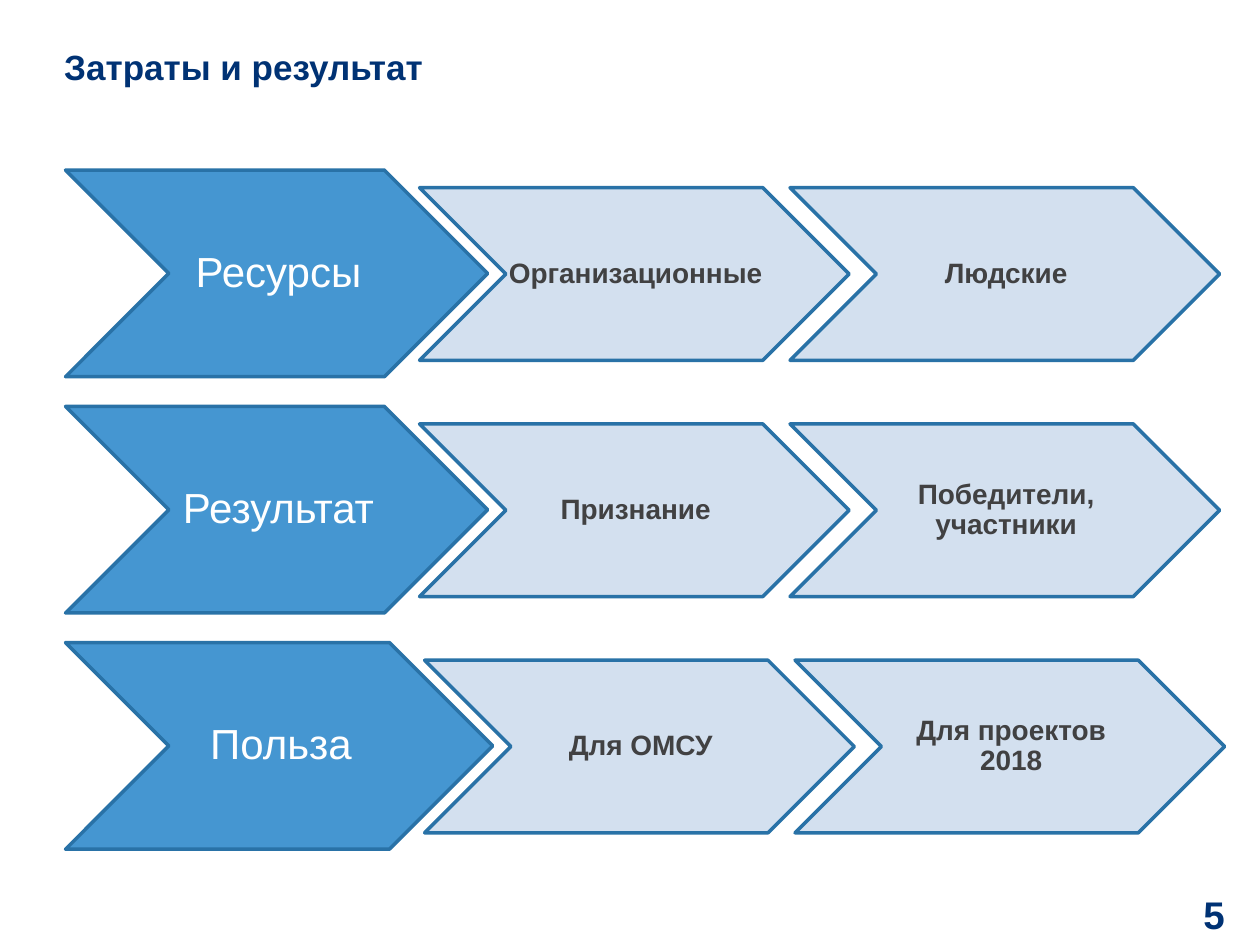
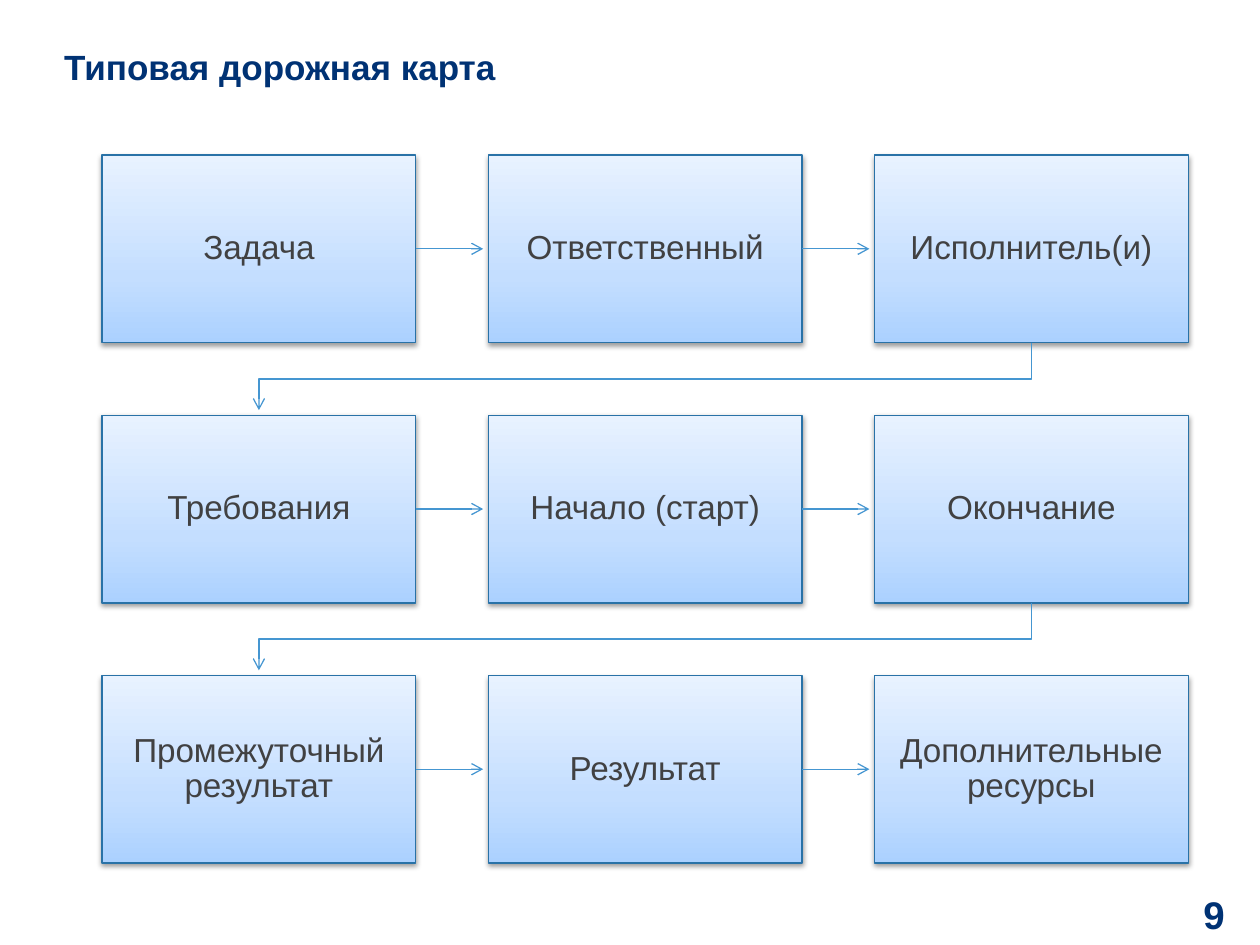
from collections import namedtuple
from copy import deepcopy

from lxml import etree
from pptx import Presentation
from pptx import util as u
from pptx.dml.color import RGBColor
from pptx.enum import shapes, text
from pptx.oxml.ns import qn

COLORS = {
    "navy": "003274",
    "blue": "4596D1",
    "outline": "2972A7",
    "pale": "CFDDEE",
    "ink": "414142",
    "white": "FFFFFF",
    "shadow": "000000",
}
BOX_GRADIENT = [(0, "ABD1FF"), (0.35, "C4DEFF"), (1, "E8F2FF")]
FONT = "Arial"
TITLE_FRAME = (0.51, 0, 8.35, 1.05)
NUMBER_FRAME = (9.03, 7.05, 0.69, 0.41)
ARROW_GAP = 0.04

Grid = namedtuple("Grid", "left top column_step row_step width height")
STAGES = Grid(0.52, 1.35, 0, 3.75 / 2, 3.35, 1.64)
DETAILS = Grid(3.33, 1.49, 2.94, 3.75 / 2, 3.41, 1.37)
STEPS = Grid(0.81, 1.23, 6.13 / 2, 4.13 / 2, 2.49, 1.49)

COST_ROWS = [
    ("Ресурсы", ["Организационные", "Людские"], 0),
    ("Результат", ["Признание", "Победители, участники"], 0),
    ("Польза", ["Для ОМСУ", "Для проектов 2018"], 0.04),
]
ROADMAP_ROWS = [
    ["Задача", "Ответственный", "Исполнитель(и)"],
    ["Требования", "Начало (старт)", "Окончание"],
    ["Промежуточный результат", "Результат", "Дополнительные ресурсы"],
]


def rgb(name):
    return RGBColor.from_string(COLORS[name])


def inches(values):
    return [u.Inches(value) for value in values]


def cell(grid, column, row):
    return (grid.left + column * grid.column_step,
            grid.top + row * grid.row_step, grid.width, grid.height)


def write(shape, words, size, color, bold=False, align=text.PP_ALIGN.CENTER,
          margins=(0, 0, 0, 0), spacing=1.0):
    frame = shape.text_frame
    frame.auto_size = text.MSO_AUTO_SIZE.NONE
    frame.word_wrap = True
    frame.vertical_anchor = text.MSO_ANCHOR.MIDDLE
    (frame.margin_left, frame.margin_top,
     frame.margin_right, frame.margin_bottom) = inches(margins)
    paragraph = frame.paragraphs[0]
    paragraph.alignment = align
    paragraph.line_spacing = spacing
    run = paragraph.add_run()
    run.text = words
    run.font.name = FONT
    run.font.size = u.Pt(size)
    run.font.bold = bold
    run.font.color.rgb = rgb(color)


def set_line(shape, color, width):
    shape.line.color.rgb = rgb(color)
    shape.line.width = u.Pt(width)


def add_alpha(color_element, percent):
    etree.SubElement(color_element, qn("a:alpha"), val=str(percent * 1000))


def add_titled_slide(presentation, title, number):
    slide = presentation.slides.add_slide(presentation.slide_layouts[5])
    heading = slide.shapes.title
    heading.left, heading.top, heading.width, heading.height = inches(TITLE_FRAME)
    write(heading, title, 20, "navy", bold=True, align=text.PP_ALIGN.LEFT)
    number_box = slide.shapes.add_textbox(*inches(NUMBER_FRAME))
    write(number_box, str(number), 22, "navy", bold=True,
          align=text.PP_ALIGN.RIGHT)
    return slide


def add_chevron(slide, frame, fill, alpha=100):
    shape = slide.shapes.add_shape(shapes.MSO_SHAPE.CHEVRON, *inches(frame))
    shape.shadow.inherit = False
    shape.fill.solid()
    shape.fill.fore_color.rgb = rgb(fill)
    if alpha < 100:
        solid = shape._element.spPr.find(qn("a:solidFill"))
        add_alpha(solid[0], alpha)
    set_line(shape, "outline", 2)
    return shape


def fill_gradient(shape, stops):
    shape.fill.gradient()
    shape.fill.gradient_angle = 90
    stop_list = shape._element.spPr.find(qn("a:gradFill")).find(qn("a:gsLst"))
    while len(stop_list) < len(stops):
        stop_list.append(deepcopy(stop_list[0]))
    for stop, (position, color) in zip(shape.fill.gradient_stops, stops):
        stop.position = position
        stop.color.rgb = RGBColor.from_string(color)


def add_shadow(shape):
    shape.shadow.inherit = False
    effects = shape._element.spPr.find(qn("a:effectLst"))
    shadow = etree.SubElement(
        effects, qn("a:outerShdw"), blurRad=str(u.Pt(3.1)),
        dist=str(u.Pt(1.6)), dir="5400000", rotWithShape="0")
    color = etree.SubElement(shadow, qn("a:srgbClr"), val=COLORS["shadow"])
    add_alpha(color, 38)


def add_step(slide, frame, words):
    shape = slide.shapes.add_shape(shapes.MSO_SHAPE.RECTANGLE, *inches(frame))
    fill_gradient(shape, BOX_GRADIENT)
    set_line(shape, "outline", 0.75)
    add_shadow(shape)
    write(shape, words, 19, "ink", margins=(0.15,) * 4, spacing=0.9)
    return shape


def style_arrow(shape):
    set_line(shape, "blue", 0.75)
    properties = shape._element.spPr
    etree.SubElement(properties.find(qn("a:ln")), qn("a:tailEnd"), type="arrow")
    etree.SubElement(properties, qn("a:effectLst"))


def add_side_arrow(slide, source, target):
    middle = source.top + source.height // 2
    arrow = slide.shapes.add_connector(
        shapes.MSO_CONNECTOR.STRAIGHT, source.left + source.width, middle,
        target.left - u.Inches(ARROW_GAP), middle)
    arrow.begin_connect(source, 3)
    style_arrow(arrow)


def add_return_arrow(slide, source, target):
    start_x = source.left + source.width // 2
    start_y = source.top + source.height
    end_x = target.left + target.width // 2
    turn_y = (start_y + target.top) // 2
    builder = slide.shapes.build_freeform(start_x, start_y)
    builder.add_line_segments(
        [(start_x, turn_y), (end_x, turn_y),
         (end_x, target.top - u.Inches(ARROW_GAP))], close=False)
    arrow = builder.convert_to_shape()
    arrow.fill.background()
    style_arrow(arrow)


def build_costs(presentation):
    slide = add_titled_slide(presentation, "Затраты и результат", 5)
    for row, (stage, details, extra) in enumerate(COST_ROWS):
        left, top, width, height = cell(STAGES, 0, row)
        chevron = add_chevron(slide, (left, top, width + extra, height), "blue")
        write(chevron, stage, 24, "white",
              margins=(0.03, 0.02, 0, 0.02), spacing=0.9)
        for column, detail in enumerate(details):
            left, top, width, height = cell(DETAILS, column, row)
            chevron = add_chevron(slide, (left + extra, top, width, height),
                                  "pale", alpha=90)
            write(chevron, detail, 16, "ink", bold=True,
                  margins=(0.02, 0.01, 0, 0.01), spacing=0.9)


def build_roadmap(presentation):
    slide = add_titled_slide(presentation, "Типовая дорожная карта", 9)
    rows = [[add_step(slide, cell(STEPS, column, row), words)
             for column, words in enumerate(labels)]
            for row, labels in enumerate(ROADMAP_ROWS)]
    for steps in rows:
        for source, target in zip(steps, steps[1:]):
            add_side_arrow(slide, source, target)
    for upper, lower in zip(rows, rows[1:]):
        add_return_arrow(slide, upper[-1], lower[0])


def main():
    presentation = Presentation()
    presentation.slide_width = u.Inches(10)
    presentation.slide_height = u.Inches(7.5)
    build_costs(presentation)
    build_roadmap(presentation)
    presentation.save("out.pptx")


if __name__ == "__main__":
    main()
